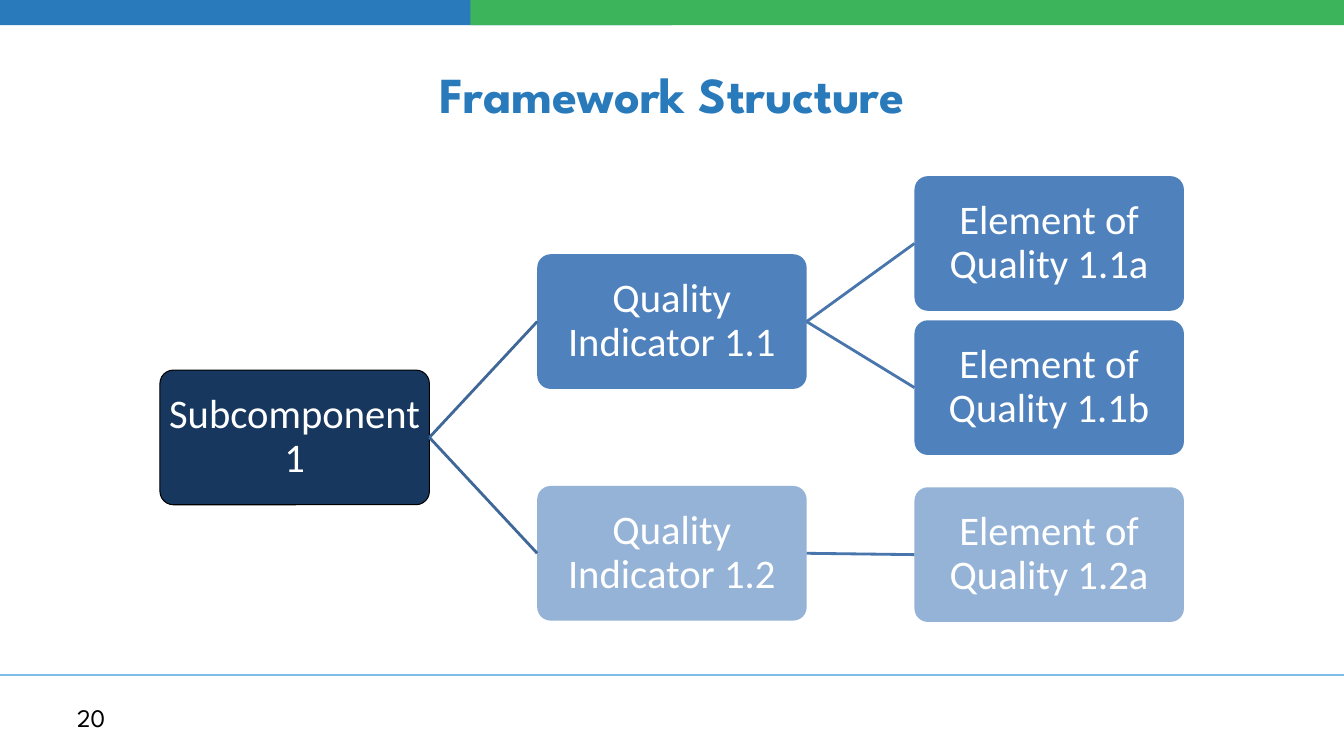
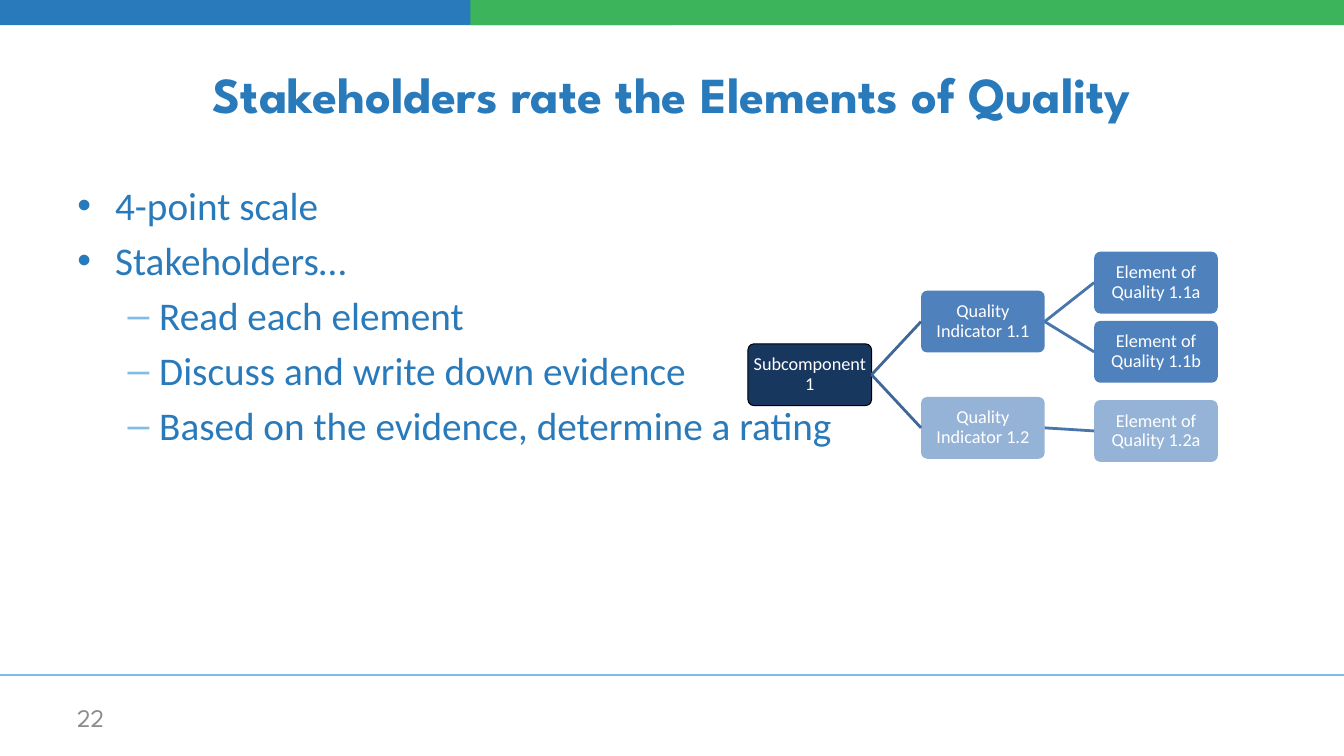
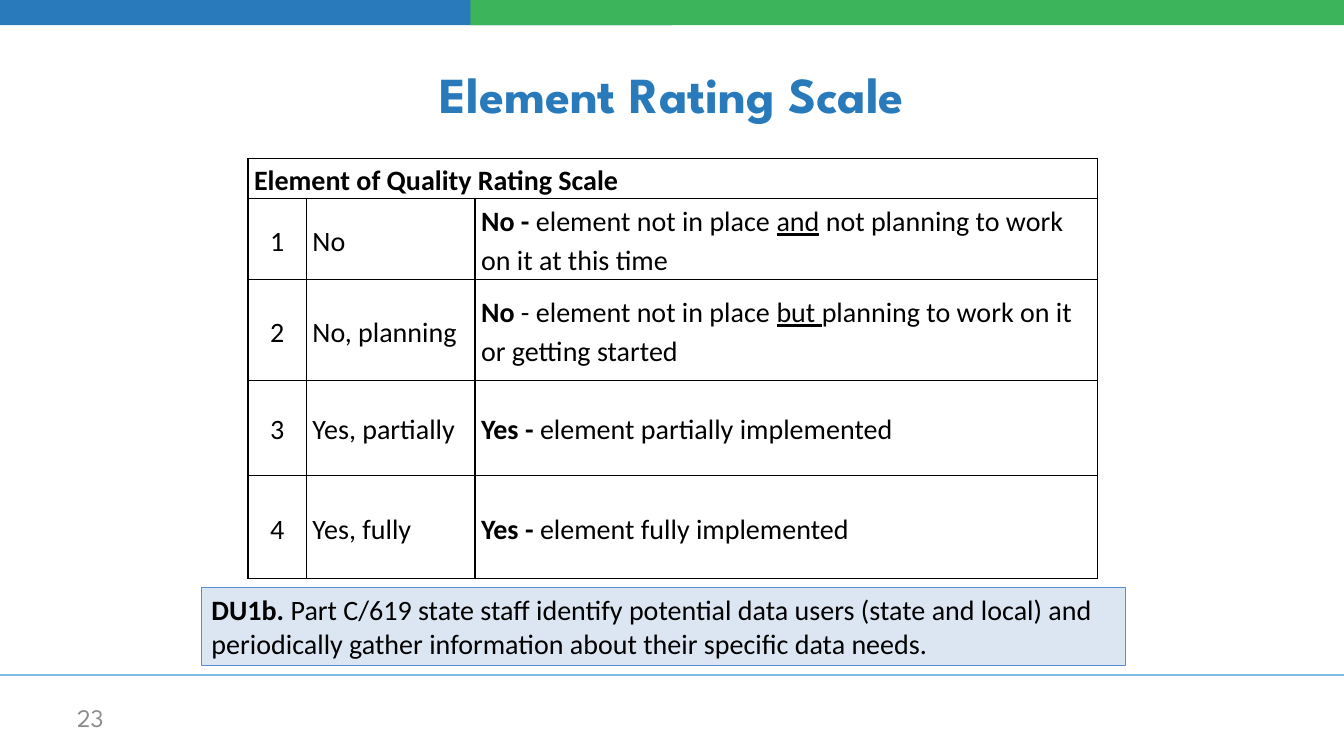
import lxml.etree
import pptx
import pptx.dml.color
import pptx.enum.shapes
import pptx.enum.text
import pptx.oxml.ns
import pptx.util

# Slide grid: 20 columns by 30 rows
W, H = pptx.util.Inches(13.33), pptx.util.Inches(7.5)
COLS, ROWS = 20, 30

# Shared colours and fonts
BLUE, GREEN, SKY = "297ABB", "3CB45C", "7FBCE7"
NAVY, MID, PALE = "17375E", "4F81BD", "95B3D7"
BLACK, WHITE, GREY = "000000", "FFFFFF", "8C8C8C"
HEAD_FONT, BODY_FONT = "League Spartan", "Calibri"

ALIGN = pptx.enum.text.PP_ALIGN
MIDDLE = pptx.enum.text.MSO_ANCHOR.MIDDLE
SHAPE = pptx.enum.shapes.MSO_SHAPE
STRAIGHT = pptx.enum.shapes.MSO_CONNECTOR.STRAIGHT


def col(n):
    return round(W * n / COLS)


def row(n):
    return round(H * n / ROWS)


def box(x, y, w, h):
    return col(x), row(y), col(w), row(h)


def rgb(value):
    return pptx.dml.color.RGBColor.from_string(value)


def child(parent, tag, **attrs):
    return lxml.etree.SubElement(parent, pptx.oxml.ns.qn(tag), attrs)


def add_text(p, text, size=20, color=BLACK, font=BODY_FONT, bold=False,
             underline=False, align=None, spacing=None):
    """Append one formatted run to a paragraph."""
    if align is not None:
        p.alignment = align
    if spacing is not None:
        p.line_spacing = spacing
    r = p.add_run()
    r.text = text
    f = r.font
    f.name, f.size, f.bold = font, pptx.util.Pt(size), bold
    f.underline = underline
    f.color.rgb = rgb(color)


def set_insets(target, x, y):
    target.margin_left = target.margin_right = pptx.util.Inches(x)
    target.margin_top = target.margin_bottom = pptx.util.Inches(y)


def add_box(s, kind, place, fill, line=None):
    sp = s.shapes.add_shape(kind, *place)
    sp.shadow.inherit = False
    sp.fill.solid()
    sp.fill.fore_color.rgb = rgb(fill)
    if line:
        sp.line.color.rgb = rgb(line)
        sp.line.width = pptx.util.Pt(0.75)
    else:
        sp.line.fill.background()
    return sp


def add_line(s, ends, color, width):
    line = s.shapes.add_connector(STRAIGHT, *ends)
    line.line.color.rgb = rgb(color)
    line.line.width = pptx.util.Pt(width)
    child(line._element.spPr, "a:effectLst")
    return line


def fit_placeholder(sp, place):
    sp.left, sp.top, sp.width, sp.height = place
    tf = sp.text_frame
    tf.word_wrap = True
    tf.auto_size = pptx.enum.text.MSO_AUTO_SIZE.NONE
    return tf


def add_slide(prs, layout, title, number, number_color=GREY):
    """Start a slide with the bands, rule, title and page number."""
    s = prs.slides.add_slide(prs.slide_layouts.get_by_name(layout))
    # The bands bleed over the top edge
    add_box(s, SHAPE.RECTANGLE, box(0, -5, 10, 6), BLUE)
    add_box(s, SHAPE.RECTANGLE, box(7, -5, 13, 6), GREEN)
    add_line(s, (col(-0.25), row(26.78), col(20.13), row(26.78)), SKY, 1.5)

    tf = fit_placeholder(s.shapes.title, box(1, 1.2, 18, 5))
    tf.vertical_anchor = MIDDLE
    add_text(tf.paragraphs[0], title, size=36, color=BLUE, font=HEAD_FONT,
             bold=True, align=ALIGN.CENTER)

    tf = s.shapes.add_textbox(*box(1, 27.68, 4.67, 1.6)).text_frame
    tf.word_wrap = True
    tf.vertical_anchor = MIDDLE
    add_text(tf.paragraphs[0], number, size=18, color=number_color,
             font=HEAD_FONT)
    return s


def add_tree(s, left, middle, width, size, inset, leaf_offsets):
    """Draw the framework tree; offsets are in node heights from the root."""
    w = col(width)
    h = w / 2

    def add_node(level, offset, text, fill, parent=None, line=None):
        place = (col(left) + level * 1.4 * w,
                 row(middle) + (offset - 0.5) * h, w, h)
        sp = add_box(s, SHAPE.ROUNDED_RECTANGLE, map(round, place), fill, line)
        sp.adjustments[0] = 0.1
        tf = sp.text_frame
        tf.word_wrap = True
        tf.vertical_anchor = MIDDLE
        set_insets(tf, inset, inset)
        add_text(tf.paragraphs[0], text, size=size, color=WHITE,
                 align=ALIGN.CENTER, spacing=0.9)
        if parent is not None:
            link = add_line(s, (0, 0, 0, 0),
                            "3F6797" if level == 1 else "4875AC", 2)
            link.begin_connect(parent, 3)
            link.end_connect(sp, 1)
        return sp

    root = add_node(0, 0, "Subcomponent 1", NAVY, line=BLACK)
    offsets = iter(leaf_offsets)
    for name, offset, fill, leaves in (("1.1", -0.86, MID, "ab"),
                                       ("1.2", 0.86, PALE, "a")):
        indicator = add_node(1, offset, f"Quality Indicator {name}", fill, root)
        for letter in leaves:
            add_node(2, next(offsets), f"Element of Quality {name}{letter}",
                     fill, indicator)


def add_bullets(s, items):
    tf = fit_placeholder(s.placeholders[1], box(1, 7, 18, 17.67))
    for i, (level, text) in enumerate(items):
        p = tf.paragraphs[0] if i == 0 else tf.add_paragraph()
        p.level = level
        p.space_before = pptx.util.Pt(5.6 if i else 0)
        bullet = child(p._p.get_or_add_pPr(), "a:buClr")
        child(bullet, "a:srgbClr", val=SKY if level else BLUE)
        add_text(p, text, size=28, color=BLUE)


def format_cell(cell, runs=(), align=ALIGN.LEFT, sides="LRTB"):
    """Fill a white cell with black borders; runs are (text, format) pairs."""
    tc_pr = cell._tc.get_or_add_tcPr()
    for side in "LRTB":
        ln = child(tc_pr, f"a:ln{side}", w=str(pptx.util.Pt(1)))
        if side in sides:
            child(child(ln, "a:solidFill"), "a:srgbClr", val=BLACK)
        else:
            child(ln, "a:noFill")
    cell.fill.solid()
    cell.fill.fore_color.rgb = rgb(WHITE)
    cell.vertical_anchor = MIDDLE
    set_insets(cell, 0.06, 0)
    p = cell.text_frame.paragraphs[0]
    for text, fmt in runs:
        add_text(p, text, align=align, spacing=1.15, **fmt)
    if not runs:
        child(p._p, "a:endParaRPr", sz="800")


def add_rating_table(s, heading, ratings):
    widths = (0.87, 0.66, 1.85, 9.26)
    heights = (1.6, 3.22, 4, 3.76, 4.1, 0.64)
    place = box(3.69, 6.28, sum(widths), sum(heights))
    table = s.shapes.add_table(len(heights), len(widths), *place).table
    table.first_row = table.horz_banding = False
    for column, width in zip(table.columns, widths):
        column.width = col(width)
    for line, height in zip(table.rows, heights):
        line.height = row(height)

    # Cell contents by row and column
    contents = {(0, 0): [(heading, {"bold": True})]}
    for i, (label, meaning) in enumerate(ratings, 1):
        contents.update({(i, 0): [(str(i), {})], (i, 1): [(label, {})],
                         (i, 3): meaning})
    last = len(heights) - 1
    for i in range(len(heights)):
        for j in range(len(widths)):
            format_cell(table.cell(i, j), contents.get((i, j), ()),
                        ALIGN.CENTER if i and j == 0 else ALIGN.LEFT,
                        "T" if i == last else "LRTB")

    # Merged spans: heading, label columns and the closing row
    spans = [(0, 0, 3), (last, 0, 1), (last, 2, 3)]
    spans += [(i, 1, 2) for i in range(1, last)]
    for i, first, end in spans:
        table.cell(i, first).merge(table.cell(i, end))


def add_callout(s, label, text):
    sp = add_box(s, SHAPE.RECTANGLE, box(3, 23.32, 13.75, 3.08), "DCE6F2", "558ED5")
    tf = sp.text_frame
    tf.word_wrap = True
    tf.vertical_anchor = pptx.enum.text.MSO_ANCHOR.TOP
    p = tf.paragraphs[0]
    add_text(p, label, bold=True, align=ALIGN.LEFT)
    add_text(p, text)


def main():
    prs = pptx.Presentation()
    prs.slide_width, prs.slide_height = W, H

    # Framework tree
    s = add_slide(prs, "Title Only", "Framework Structure", "20", BLACK)
    add_tree(s, left=2.38, middle=17.36, width=4.01, size=29, inset=0.02,
             leaf_offsets=(-1.44, -0.37, 0.87))

    # Rating steps with a small tree
    s = add_slide(prs, "Title and Content",
                  "Stakeholders rate the Elements of Quality", "22")
    add_bullets(s, [
        (0, "4-point scale"),
        (0, "Stakeholders…"),
        (1, "Read each element"),
        (1, "Discuss and write down evidence"),
        (1, "Based on the evidence, determine a rating"),
    ])
    add_tree(s, left=11.13, middle=14.87, width=1.84, size=13, inset=0.01,
             leaf_offsets=(-1.49, -0.37, 0.91))

    # Rating scale table
    s = add_slide(prs, "Title Only", "Element Rating Scale", "23")
    bold, under = {"bold": True}, {"underline": True}
    add_rating_table(s, "Element of Quality Rating Scale", [
        ("No", [("No - ", bold), ("element not in place ", {}), ("and", under),
                (" not planning to work on it at this time", {})]),
        ("No, planning", [("No ", bold), ("- element not in place ", {}),
                          ("but ", under),
                          ("planning to work on it or getting started", {})]),
        ("Yes, partially", [("Yes - ", bold),
                            ("element partially implemented", {})]),
        ("Yes, fully", [("Yes - ", bold), ("element fully implemented", {})]),
    ])
    add_callout(s, "DU1b.", " Part C/619 state staff identify potential data "
                "users (state and local) and periodically gather information "
                "about their specific data needs.")

    prs.save("out.pptx")


if __name__ == "__main__":
    main()
